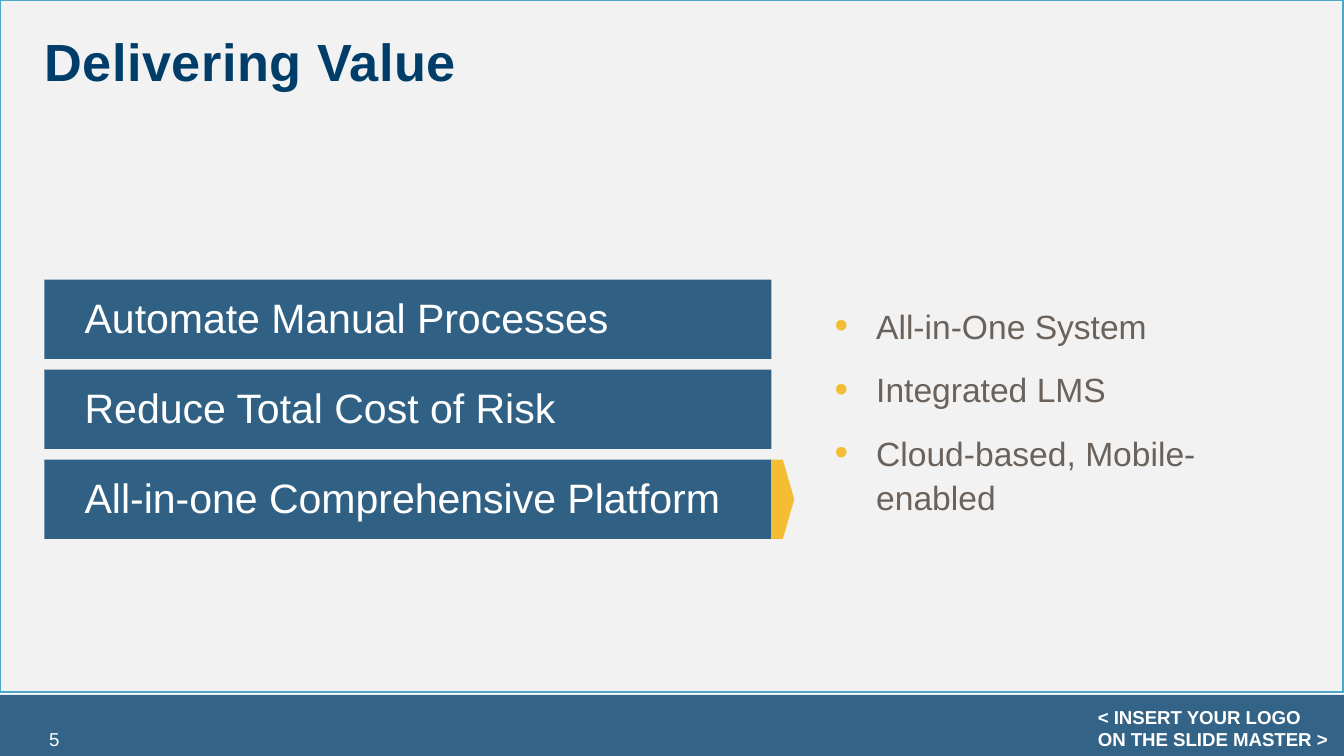
from lxml.etree import SubElement
from pptx import Presentation
from pptx.dml.color import RGBColor
from pptx.enum.shapes import MSO_SHAPE
from pptx.enum.text import MSO_ANCHOR, MSO_AUTO_SIZE, PP_ALIGN
from pptx.oxml.ns import qn
from pptx.util import Inches, Pt

FONT = "Arial"
COLORS = {"navy": "003D69", "white": "FFFFFF", "panel": "F2F2F2",
          "edge": "4CA7C4", "gold": "F4BD33", "grey": "6A625B"}
BARS = ["Automate Manual Processes", "Reduce Total Cost of Risk",
        "All-in-one Comprehensive Platform"]
POINTS = ["All-in-One System", "Integrated LMS", "Cloud-based, Mobile-enabled"]


def paint(name):
    return RGBColor.from_string(COLORS[name])


def write(shape, lines, size, color, bold=False, align=PP_ALIGN.LEFT,
          anchor=MSO_ANCHOR.MIDDLE, inset=(0.1, 0.05)):
    frame = shape.text_frame
    frame.text = "\n".join(lines)
    frame.word_wrap = True
    frame.auto_size = MSO_AUTO_SIZE.NONE
    frame.vertical_anchor = anchor
    frame.margin_left = frame.margin_right = Inches(inset[0])
    frame.margin_top = frame.margin_bottom = Inches(inset[1])
    for para in frame.paragraphs:
        para.alignment = align
        for run in para.runs:
            run.font.name = FONT
            run.font.size = Pt(size)
            run.font.bold = bold
            run.font.color.rgb = paint(color)
    return frame


def space(frame):
    for para in frame.paragraphs:
        para.line_spacing = Pt(24)
        para.space_before = Pt(10)


def block(slide, kind, box, color, alpha=None, edge=None):
    shape = slide.shapes.add_shape(kind, *map(Inches, box))
    shape.shadow.inherit = False
    shape.fill.solid()
    shape.fill.fore_color.rgb = paint(color)
    if alpha:
        tint = shape.fill._xPr.find(".//" + qn("a:srgbClr"))
        SubElement(tint, qn("a:alpha"), val=str(alpha * 1000))
    if edge:
        shape.line.color.rgb = paint(edge)
        shape.line.width = Pt(1.5)
    else:
        shape.line.fill.background()
    return shape


def label(slide, box):
    return slide.shapes.add_textbox(*map(Inches, box))


def bullet(para):
    props = para._p.get_or_add_pPr()
    props.set("marL", str(Inches(0.31)))
    props.set("indent", str(Inches(-0.31)))
    tint = SubElement(props, qn("a:buClr"))
    SubElement(tint, qn("a:srgbClr"), val=COLORS["gold"])
    SubElement(props, qn("a:buSzPct"), val="115000")
    SubElement(props, qn("a:buFont"), typeface=FONT)
    SubElement(props, qn("a:buChar"), char="•")


def footer(slide, x, y, w, h):
    block(slide, MSO_SHAPE.RECTANGLE, (x, y, w, h), "navy", alpha=80)
    number = label(slide, (x + 0.12, y + 0.18, 0.42, 0.3))
    write(number, ["5"], 10, "white", align=PP_ALIGN.RIGHT)
    logo = label(slide, (x + w - 1.93, y + 0.03, 1.93, 0.44))
    write(logo, ["< INSERT YOUR LOGO ON THE SLIDE MASTER >"], 10, "white",
          bold=True, anchor=MSO_ANCHOR.TOP)


def heading(slide, x, y, w, h):
    title = slide.shapes.title
    title.left, title.top, title.width, title.height = map(Inches, (x, y, w, h))
    frame = write(title, ["Delivering Value"], 28, "navy", bold=True,
                  anchor=MSO_ANCHOR.TOP, inset=(0, 0))
    frame.paragraphs[0].runs[0].font._element.set("spc", "30")
    # Bring the title in front of the panel
    slide.shapes._spTree.append(title._element)


def stack(slide, x, y, w, h, step):
    for row, text in enumerate(BARS):
        top = y + row * step
        bar = block(slide, MSO_SHAPE.RECTANGLE, (x, top, w, h), "navy", alpha=80)
        space(write(bar, [text], 22, "white", inset=(0.3, 0.2)))
    # Pointer marks the last bar
    block(slide, MSO_SHAPE.PENTAGON, (x + w, top, 0.17, h), "gold")


def detail(slide, x, y, w, h):
    frame = write(label(slide, (x, y, w, h)), POINTS, 18, "grey",
                  inset=(0.3, 0.2))
    space(frame)
    for para in frame.paragraphs:
        bullet(para)


def main():
    deck = Presentation()
    deck.slide_width = Inches(10)
    deck.slide_height = deck.slide_width * 9 // 16
    slide = deck.slides.add_slide(deck.slide_layouts[5])
    # Backdrop
    footer(slide, 0, 5.17, 10, 0.46)
    block(slide, MSO_SHAPE.RECTANGLE, (0, 0, 10, 5.15), "panel", edge="edge")
    # Content
    heading(slide, 0.33, 0.22, 9.34, 0.63)
    stack(slide, 0.33, 2.08, 5.41, 0.59, 0.67)
    detail(slide, 5.91, 1.92, 3.76, 2.25)
    deck.save("out.pptx")


if __name__ == "__main__":
    main()
